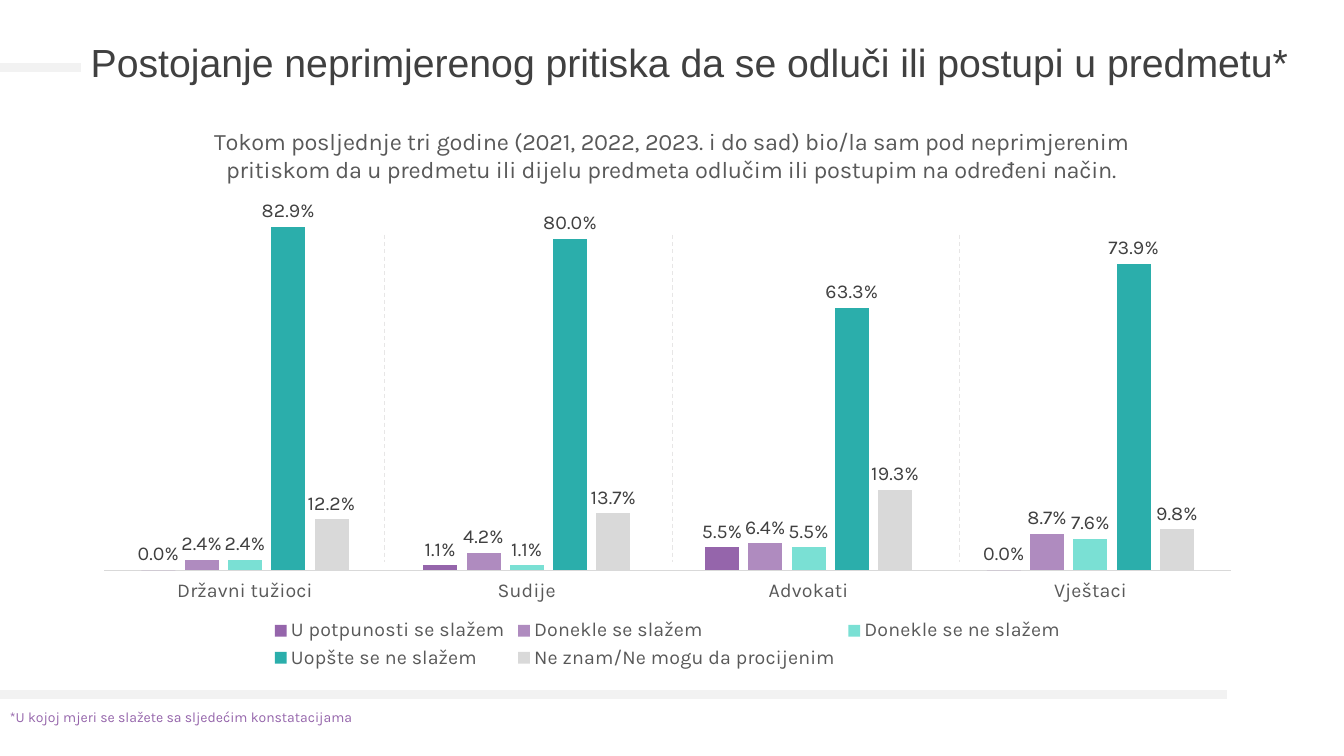
from lxml import etree
from pptx import Presentation
from pptx.chart.data import CategoryChartData
from pptx.dml.color import RGBColor
from pptx.enum.chart import XL_CHART_TYPE as ChartType
from pptx.enum.chart import XL_LABEL_POSITION as LabelPosition
from pptx.enum.chart import XL_LEGEND_POSITION as LegendPosition
from pptx.enum.chart import XL_TICK_LABEL_POSITION as TickLabelPosition
from pptx.enum.chart import XL_TICK_MARK as TickMark
from pptx.enum.dml import MSO_LINE_DASH_STYLE as DashStyle
from pptx.enum.shapes import MSO_CONNECTOR as Connector
from pptx.enum.text import MSO_ANCHOR as Anchor
from pptx.enum.text import MSO_AUTO_SIZE as AutoSize
from pptx.enum.text import PP_ALIGN as Align
from pptx.oxml import parse_xml
from pptx.oxml.ns import nsdecls, qn
from pptx.util import Pt

DARK = RGBColor(0x40, 0x40, 0x40)
GRAY = RGBColor(0x59, 0x59, 0x59)
AXIS_GRAY = RGBColor(0xD9, 0xD9, 0xD9)
RULE_GRAY = RGBColor(0xF2, 0xF2, 0xF2)
DIVIDER_GRAY = RGBColor(0xE7, 0xE6, 0xE6)
PURPLE = RGBColor(0x95, 0x65, 0xAB)
LILAC = RGBColor(0xAF, 0x8B, 0xBF)
MINT = RGBColor(0x7A, 0xE0, 0xD4)
TEAL = RGBColor(0x2B, 0xAE, 0xAB)

TITLE = "Postojanje neprimjerenog pritiska da se odluči ili postupi u predmetu*"
QUESTION = (
    "Tokom posljednje tri godine (2021, 2022, 2023. i do sad) bio/la sam pod neprimjerenim "
    "pritiskom da u predmetu ili dijelu predmeta odlučim ili postupim na određeni način."
)
FOOTNOTE = "*U kojoj mjeri se slažete sa sljedećim konstatacijama"
GROUPS = ["Državni tužioci", "Sudije", "Advokati", "Vještaci"]
ANSWERS = [
    ("U potpunosti se slažem", PURPLE, (0, 0.011, 0.055, 0)),
    ("Donekle se slažem", LILAC, (0.024, 0.042, 0.064, 0.087)),
    ("Donekle se ne slažem", MINT, (0.024, 0.011, 0.055, 0.076)),
    ("Uopšte se ne slažem", TEAL, (0.829, 0.8, 0.633, 0.739)),
    ("Ne znam/Ne mogu da procijenim", AXIS_GRAY, (0.122, 0.137, 0.193, 0.098)),
]


def style_font(font, size, color, name="Karla"):
    font.size = Pt(size)
    font.name = name
    font.bold = False
    font.color.rgb = color


def add_line(slide, x1, y1, x2, y2, color, width):
    line = slide.shapes.add_connector(Connector.STRAIGHT, Pt(x1), Pt(y1), Pt(x2), Pt(y2))
    line.line.color.rgb = color
    line.line.width = Pt(width)
    etree.SubElement(line._element.spPr, qn("a:effectLst"))
    return line


def manual_layout(x, y, width=None, height=None):
    """Chart layout in fractions of the chart's box."""
    target = '<c:layoutTarget val="inner"/>' if width else ""
    size = f'<c:w val="{width}"/><c:h val="{height}"/>' if width else ""
    return parse_xml(
        f'<c:layout {nsdecls("c")}><c:manualLayout>{target}'
        f'<c:xMode val="edge"/><c:yMode val="edge"/><c:x val="{x}"/><c:y val="{y}"/>{size}'
        "</c:manualLayout></c:layout>"
    )


def set_layout(parent, layout, index):
    for existing in parent.findall(qn("c:layout")):
        parent.remove(existing)
    parent.insert(index, layout)


def add_heading(slide, left, top, width, height):
    # Title with the short rule leading up to it
    add_line(slide, 0, top + 33.8, left, top + 33.8, RULE_GRAY, 6)
    title = slide.shapes.title
    title.left, title.top, title.width, title.height = Pt(left), Pt(top), Pt(width), Pt(height)
    frame = title.text_frame
    frame.text = TITLE
    frame.auto_size = AutoSize.NONE
    frame.vertical_anchor = Anchor.MIDDLE
    paragraph = frame.paragraphs[0]
    paragraph.alignment = Align.LEFT
    paragraph.line_spacing = 0.9
    style_font(paragraph.font, 28, DARK, "Arial")


def add_footnote(slide, left, top, width, height):
    # Footer rule and note
    add_line(slide, left, top - 6.5, 876.2, top - 6.5, RULE_GRAY, 6)
    box = slide.shapes.add_textbox(Pt(left), Pt(top), Pt(width), Pt(height))
    frame = box.text_frame
    frame.word_wrap = True
    frame.text = FOOTNOTE
    style_font(frame.paragraphs[0].font, 10, PURPLE)


def add_answer_chart(slide, left, top, width, height):
    data = CategoryChartData(number_format="0.0%")
    data.categories = GROUPS
    for name, _, values in ANSWERS:
        data.add_series(name, values)
    chart = slide.shapes.add_chart(
        ChartType.COLUMN_CLUSTERED, Pt(left), Pt(top), Pt(width), Pt(height), data
    ).chart
    style_font(chart.font, 14, GRAY)

    # Survey question
    chart.has_title = True
    chart.chart_title.include_in_layout = False
    question = chart.chart_title.text_frame
    question.text = QUESTION
    style_font(question.paragraphs[0].font, 16.8, GRAY)
    set_layout(chart.chart_title._element, manual_layout(0.11, 0.04), 1)

    # Columns and their labels
    plot = chart.plots[0]
    plot.gap_width, plot.overlap = 219, -27
    plot.vary_by_categories = False
    for series, (_, color, _) in zip(plot.series, ANSWERS):
        series.format.fill.solid()
        series.format.fill.fore_color.rgb = color
        labels = series.data_labels
        labels.show_value = True
        labels.number_format = "0.0%"
        labels.number_format_is_linked = False
        labels.position = LabelPosition.OUTSIDE_END
        style_font(labels.font, 14, DARK)
    plot_area = chart._chartSpace.chart.plotArea
    set_layout(plot_area, manual_layout(0.02, 0.17, 0.96, 0.65), 0)

    # Axes and legend
    groups_axis = chart.category_axis
    groups_axis.major_tick_mark = TickMark.NONE
    groups_axis.tick_label_position = TickLabelPosition.LOW
    groups_axis.format.line.color.rgb = AXIS_GRAY
    groups_axis.format.line.width = Pt(0.75)
    style_font(groups_axis.tick_labels.font, 14, GRAY)
    share_axis = chart.value_axis
    share_axis.minimum_scale, share_axis.maximum_scale = 0, 0.9
    share_axis.has_major_gridlines = False
    share_axis.visible = False
    chart.has_legend = True
    chart.legend.position = LegendPosition.BOTTOM
    chart.legend.include_in_layout = False
    style_font(chart.legend.font, 14, GRAY)

    # Dashed dividers between the groups
    for index in range(len(GROUPS) - 1):
        x = left + 217.4 + index * 205.2
        divider = add_line(slide, x, top + 96.5, x, top + 330.5, DIVIDER_GRAY, 0.75)
        divider.line.dash_style = DashStyle.DASH


def main():
    presentation = Presentation()
    presentation.slide_width, presentation.slide_height = Pt(960), Pt(540)
    slide = presentation.slides.add_slide(presentation.slide_layouts[5])
    add_heading(slide, 57.6, 14.4, 875.5, 63.4)
    add_footnote(slide, 0, 502.6, 820, 19.4)
    add_answer_chart(slide, 57.6, 71.3, 838.8, 409.7)
    presentation.save("out.pptx")


if __name__ == "__main__":
    main()
